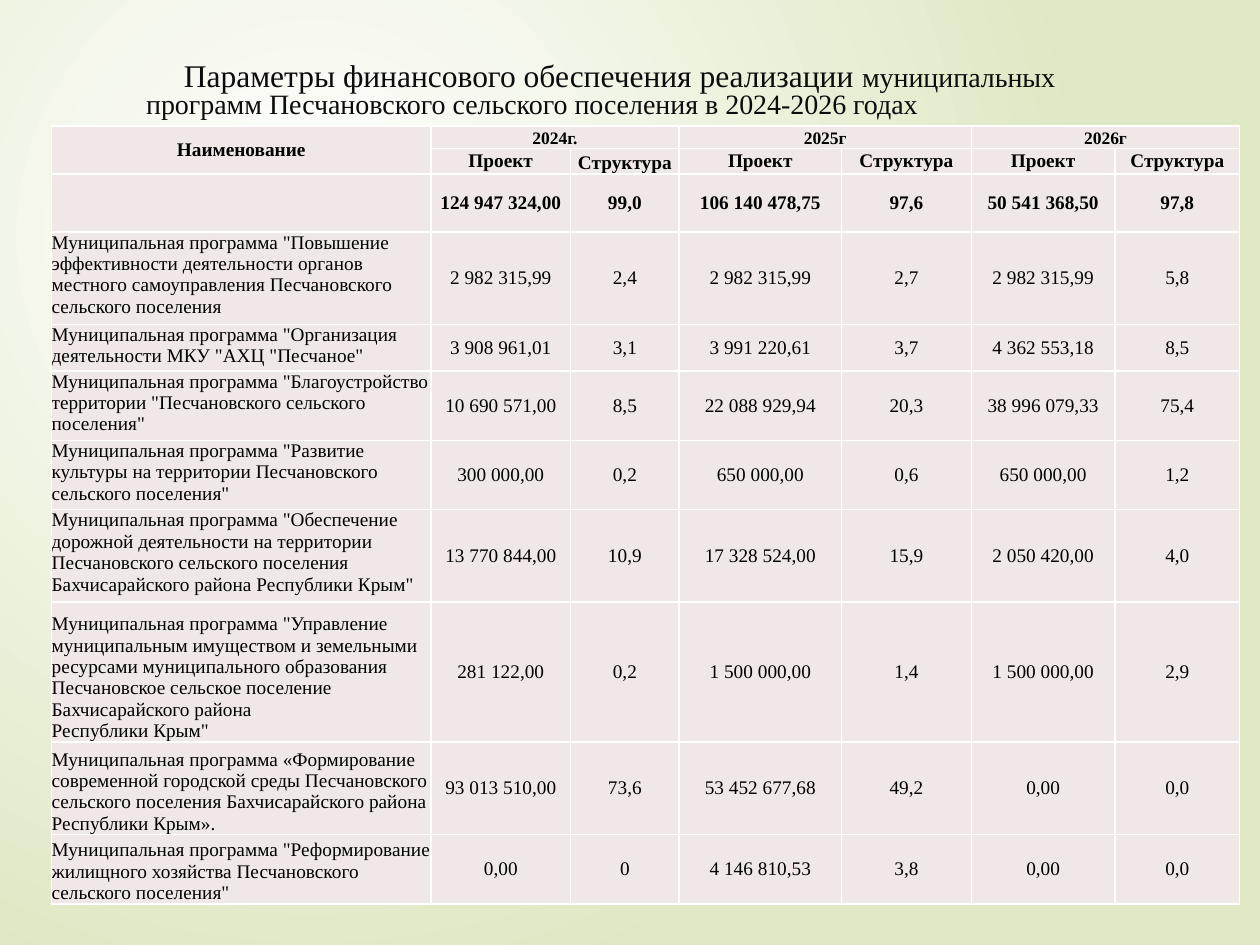
from dataclasses import dataclass

from lxml.etree import SubElement
from pptx import Presentation
from pptx.dml.color import RGBColor
from pptx.enum.text import MSO_ANCHOR, MSO_AUTO_SIZE, PP_ALIGN
from pptx.oxml.ns import qn
from pptx.util import Inches, Pt


@dataclass(frozen=True)
class Theme:
    font: str = "Times New Roman"
    back_center: str = "FFFFFF"
    back_edge: str = "DFE8C4"
    title_color: str = "0C0C0C"
    text_color: str = "000000"
    cell_fill: str = "F0E8E7"
    border: str = "FFFFFF"
    title_size: float = 18
    subtitle_size: float = 16
    table_size: float = 11
    year_size: float = 10
    border_width: float = 1


THEME = Theme()

COL_WIDTHS = [3.01, 1.11, 0.86, 1.29, 1.03, 1.14, 0.99]
ROW_HEIGHTS = [0.18, 0.2, 0.46, 0.73, 0.37, 0.55, 0.55, 0.73, 1.11, 0.73, 0.55]
YEARS = ["2024г.", "2025г", "2026г"]
TOTALS = ["124 947 324,00", "99,0", "106 140 478,75", "97,6", "50 541 368,50", "97,8"]
FIRST_BOTTOM_ROW = 8
PROGRAMS = [
    ['Муниципальная программа "Повышение эффективности деятельности органов '
     'местного самоуправления Песчановского сельского поселения',
     "2 982 315,99", "2,4", "2 982 315,99", "2,7", "2 982 315,99", "5,8"],
    ['Муниципальная программа "Организация деятельности МКУ "АХЦ "Песчаное"',
     "3 908 961,01", "3,1", "3 991 220,61", "3,7", "4 362 553,18", "8,5"],
    ['Муниципальная программа "Благоустройство территории "Песчановского '
     'сельского поселения"',
     "10 690 571,00", "8,5", "22 088 929,94", "20,3", "38 996 079,33", "75,4"],
    ['Муниципальная программа "Развитие культуры на территории Песчановского '
     'сельского поселения"',
     "300 000,00", "0,2", "650 000,00", "0,6", "650 000,00", "1,2"],
    ['Муниципальная программа "Обеспечение дорожной деятельности на территории '
     'Песчановского сельского поселения Бахчисарайского района Республики Крым"',
     "13 770 844,00", "10,9", "17 328 524,00", "15,9", "2 050 420,00", "4,0"],
    ['Муниципальная программа "Управление муниципальным имуществом и земельными '
     'ресурсами муниципального образования Песчановское сельское поселение\n'
     'Бахчисарайского района\nРеспублики Крым"',
     "281 122,00", "0,2", "1 500 000,00", "1,4", "1 500 000,00", "2,9"],
    ['Муниципальная программа «Формирование современной городской среды '
     'Песчановского сельского поселения Бахчисарайского района Республики Крым».',
     "93 013 510,00", "73,6", "53 452 677,68", "49,2", "0,00", "0,0"],
    ['Муниципальная программа "Реформирование жилищного хозяйства '
     'Песчановского сельского поселения"',
     "0,00", "0", "4 146 810,53", "3,8", "0,00", "0,0"],
]


def add_text(p, text, size=THEME.table_size, color=THEME.text_color, bold=False):
    r = p.add_run()
    r.text = text
    r.font.name = THEME.font
    r.font.size = Pt(size)
    r.font.bold = bold
    r.font.color.rgb = RGBColor.from_string(color)


def set_background(s):
    fill = s.background.fill
    fill.gradient()
    colors = (THEME.back_center, THEME.back_edge)
    for stop, color, position in zip(fill.gradient_stops, colors, (0, 1)):
        stop.color.rgb = RGBColor.from_string(color)
        stop.position = position
    grad = s.element.find(".//" + qn("a:gradFill"))
    grad.remove(grad.find(qn("a:lin")))
    circle = SubElement(grad, qn("a:path"), path="circle")
    SubElement(circle, qn("a:fillToRect"), l="50000", t="50000", r="100000", b="100000")


def place_title(s, left, top, width, height):
    sp = s.shapes.title
    sp.left, sp.top, sp.width, sp.height = left, top, width, height
    tf = sp.text_frame
    tf.margin_left = tf.margin_right = tf.margin_bottom = 0
    tf.margin_top = Inches(0.1)
    tf.word_wrap = True
    tf.auto_size = MSO_AUTO_SIZE.SHAPE_TO_FIT_TEXT
    tf.vertical_anchor = MSO_ANCHOR.TOP
    p = tf.paragraphs[0]
    p.alignment = PP_ALIGN.LEFT
    p.line_spacing = 0.8
    p.space_before = Pt(6.8)
    pPr = p._p.get_or_add_pPr()
    pPr.set("marL", str(Inches(0.01)))
    pPr.set("indent", str(Inches(0.3)))
    add_text(p, "Параметры финансового обеспечения реализации ",
             size=THEME.title_size, color=THEME.title_color)
    add_text(p, "муниципальных программ Песчановского сельского поселения "
                "в 2024-2026 годах",
             size=THEME.subtitle_size, color=THEME.title_color)


def style_cell(cell):
    cell.margin_left = cell.margin_right = cell.margin_top = cell.margin_bottom = 0
    tcPr = cell._tc.get_or_add_tcPr()
    for side in ("a:lnL", "a:lnR", "a:lnT", "a:lnB"):
        ln = SubElement(tcPr, qn(side), w=str(Pt(THEME.border_width)))
        SubElement(SubElement(ln, qn("a:solidFill")), qn("a:srgbClr"), val=THEME.border)
    cell.fill.solid()
    cell.fill.fore_color.rgb = RGBColor.from_string(THEME.cell_fill)


def write_cell(cell, text, anchor=MSO_ANCHOR.MIDDLE, align=PP_ALIGN.CENTER, **fmt):
    cell.vertical_anchor = anchor
    tf = cell.text_frame
    for i, line in enumerate(text.split("\n")):
        p = tf.add_paragraph() if i else tf.paragraphs[0]
        p.alignment = align
        add_text(p, line, **fmt)


def place_table(s, left, top, width, height):
    frame = s.shapes.add_table(len(ROW_HEIGHTS), len(COL_WIDTHS), left, top, width, height)
    table = frame.table
    table.first_row = table.horz_banding = False
    for col, size in zip(table.columns, COL_WIDTHS):
        col.width = Inches(size)
    for row, size in zip(table.rows, ROW_HEIGHTS):
        row.height = Inches(size)
    for cell in table.iter_cells():
        style_cell(cell)

    table.cell(0, 0).merge(table.cell(1, 0))
    write_cell(table.cell(0, 0), "Наименование", bold=True)
    for i, year in enumerate(YEARS):
        c = 1 + 2 * i
        table.cell(0, c).merge(table.cell(0, c + 1))
        write_cell(table.cell(0, c), year, anchor=MSO_ANCHOR.BOTTOM,
                   size=THEME.year_size, bold=True)
        write_cell(table.cell(1, c), "Проект", bold=True)
        write_cell(table.cell(1, c + 1), "Структура", bold=True,
                   anchor=MSO_ANCHOR.MIDDLE if i else MSO_ANCHOR.BOTTOM)
    for c, value in enumerate(TOTALS, 1):
        write_cell(table.cell(2, c), value, bold=True)
    for r, (name, *values) in enumerate(PROGRAMS, 3):
        anchor = MSO_ANCHOR.TOP if r < FIRST_BOTTOM_ROW else MSO_ANCHOR.BOTTOM
        write_cell(table.cell(r, 0), name, anchor=anchor, align=PP_ALIGN.LEFT)
        for c, value in enumerate(values, 1):
            write_cell(table.cell(r, c), value)


def main():
    prs = Presentation()
    prs.slide_width, prs.slide_height = Inches(10), Inches(7.5)
    s = prs.slides.add_slide(prs.slide_layouts[5])
    set_background(s)
    place_title(s, Inches(1.15), Inches(0.4), Inches(7.69), Inches(0.55))
    place_table(s, Inches(0.41), Inches(1), Inches(9.43), Inches(6.16))
    prs.save("out.pptx")


if __name__ == "__main__":
    main()
